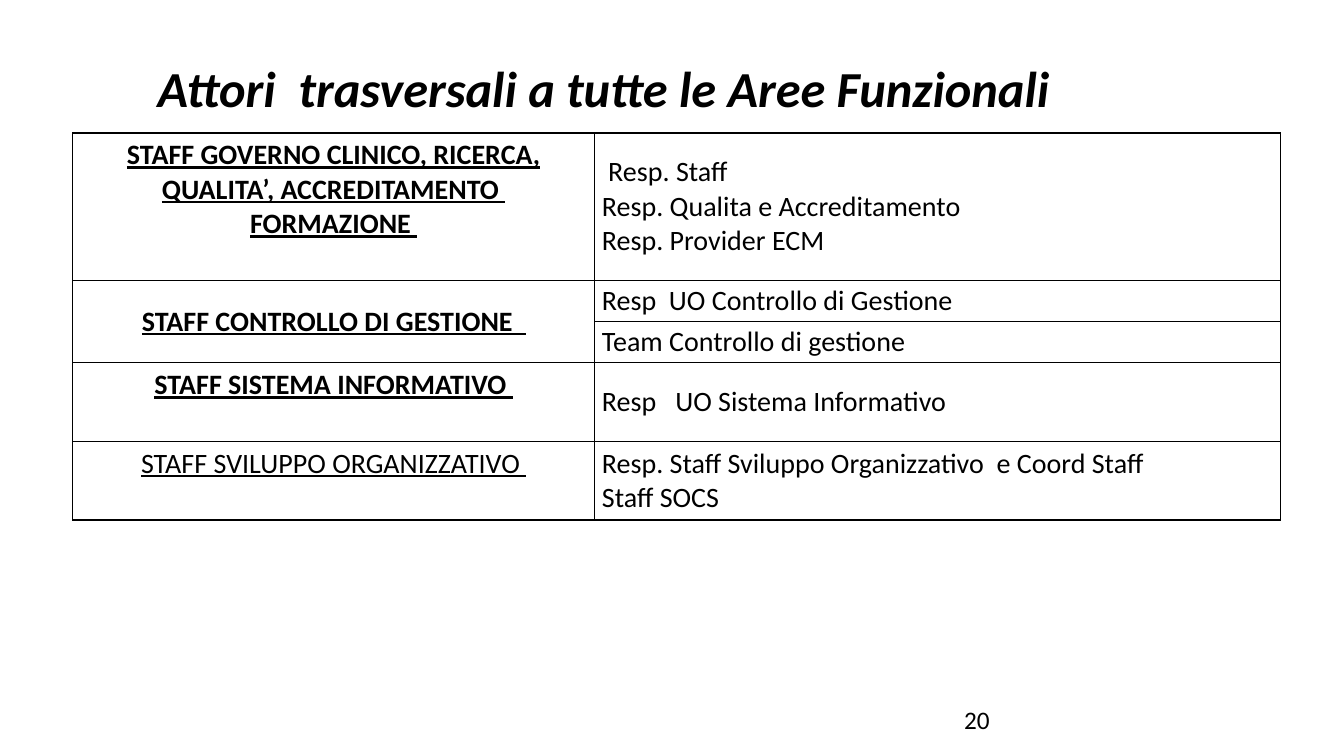
"""Builds the slide on the actors shared by all functional areas."""
from lxml import etree
from pptx import Presentation
from pptx.dml.color import RGBColor
from pptx.enum.text import MSO_ANCHOR, PP_ALIGN
from pptx.oxml.ns import qn
from pptx.util import Inches, Pt

TOP, MIDDLE = MSO_ANCHOR.TOP, MSO_ANCHOR.MIDDLE
LEFT, CENTER = PP_ALIGN.LEFT, PP_ALIGN.CENTER
COLORS = {"ink": "000000", "paper": "FFFFFF"}
SLIDE_WIDTH, SLIDE_HEIGHT = Inches(13.33), Inches(7.5)
FONT = "Calibri"

COLUMN_WIDTHS = (5.18, 6.8)
ROW_HEIGHTS = (1.46, 0.41, 0.41, 0.78, 0.78)
BORDER_SIDES = ("a:lnL", "a:lnR", "a:lnT", "a:lnB")
STAFF_MARGINS = {"margin_left": 0.1, "margin_right": 0.1,
                 "margin_top": 0.05, "margin_bottom": 0.05}
ROLE_MARGINS = {"margin_left": 0.07, "margin_right": 0.07,
                "margin_top": 0, "margin_bottom": 0}
HEADING = {"size": Pt(20), "bold": True, "underline": True}
LIGHT_HEADING = {"size": Pt(20), "bold": False, "underline": True}
ROLE = {"size": Pt(20), "bold": False, "underline": False}

STAFFS = [
    ("STAFF GOVERNO CLINICO, RICERCA, QUALITA’, ACCREDITAMENTO  FORMAZIONE ",
     HEADING, TOP,
     [[" Resp. Staff", "Resp. Qualita e Accreditamento", "Resp. Provider ECM"]]),
    ("STAFF CONTROLLO DI GESTIONE  ", HEADING, MIDDLE,
     [["Resp  UO Controllo di Gestione"], ["Team Controllo di gestione"]]),
    ("STAFF SISTEMA INFORMATIVO ", HEADING, TOP,
     [["Resp   UO Sistema Informativo"]]),
    ("STAFF SVILUPPO ORGANIZZATIVO ", LIGHT_HEADING, TOP,
     [["Resp. Staff Sviluppo Organizzativo  e Coord Staff", "Staff SOCS"]]),
]


def write_lines(frame, lines, font_format, alignment=LEFT):
    """Write one paragraph per line in the given format."""
    for index, line in enumerate(lines):
        paragraph = frame.paragraphs[0] if index == 0 else frame.add_paragraph()
        paragraph.alignment = alignment
        run = paragraph.add_run()
        run.text = line
        run.font.name = FONT
        run.font.color.rgb = RGBColor.from_string(COLORS["ink"])
        for attribute, value in font_format.items():
            setattr(run.font, attribute, value)


def add_label(slide, text, area, font_format, anchor=TOP):
    """Add a line of text in an area given as shares of the slide."""
    x, y, width, height = area
    label = slide.shapes.add_textbox(
        round(SLIDE_WIDTH * x), round(SLIDE_HEIGHT * y),
        round(SLIDE_WIDTH * width), round(SLIDE_HEIGHT * height))
    label.text_frame.word_wrap = True
    label.text_frame.vertical_anchor = anchor
    write_lines(label.text_frame, [text], font_format)


def draw_borders(cell):
    """Rule all four sides of a cell."""
    properties = cell._tc.get_or_add_tcPr()
    for position, side in enumerate(BORDER_SIDES):
        border = etree.Element(qn(side), w=str(Pt(1)))
        fill = etree.SubElement(border, qn("a:solidFill"))
        etree.SubElement(fill, qn("a:srgbClr"), val=COLORS["ink"])
        properties.insert(position, border)


def fill_cell(cell, lines, font_format, margins, anchor, alignment):
    """Write a cell's lines and set its margins and anchor."""
    for attribute, value in margins.items():
        setattr(cell, attribute, Inches(value))
    cell.vertical_anchor = anchor
    write_lines(cell.text_frame, lines, font_format, alignment)


def add_staff_table(slide):
    """Add the table of staff units and their roles."""
    table = slide.shapes.add_table(
        len(ROW_HEIGHTS), len(COLUMN_WIDTHS), Inches(0.72), Inches(1.32),
        Inches(sum(COLUMN_WIDTHS)), Inches(sum(ROW_HEIGHTS))).table
    for column, width in zip(table.columns, COLUMN_WIDTHS):
        column.width = Inches(width)
    for row, height in zip(table.rows, ROW_HEIGHTS):
        row.height = Inches(height)
    for cell in table.iter_cells():
        cell.fill.solid()
        cell.fill.fore_color.rgb = RGBColor.from_string(COLORS["paper"])
        draw_borders(cell)
    first_row = 0
    for staff, staff_format, anchor, role_groups in STAFFS:
        staff_cell = table.cell(first_row, 0)
        last_row = first_row + len(role_groups) - 1
        if last_row > first_row:
            staff_cell.merge(table.cell(last_row, 0))
        fill_cell(staff_cell, [staff], staff_format, STAFF_MARGINS, anchor, CENTER)
        for row, roles in enumerate(role_groups, first_row):
            fill_cell(table.cell(row, 1), roles, ROLE, ROLE_MARGINS, MIDDLE, LEFT)
        first_row = last_row + 1


def main():
    """Build and save the slide."""
    deck = Presentation()
    deck.slide_width, deck.slide_height = SLIDE_WIDTH, SLIDE_HEIGHT
    slide = deck.slides.add_slide(deck.slide_layouts[6])
    add_staff_table(slide)
    add_label(slide, "20", (0.71, 0.925, 0.22, 0.05), {"size": Pt(18)})
    add_label(slide, "Attori  trasversali a tutte le Aree Funzionali",
              (0.11, 0.05, 0.82, 0.13),
              {"size": Pt(36), "bold": True, "italic": True}, MIDDLE)
    deck.save("out.pptx")


if __name__ == "__main__":
    main()
